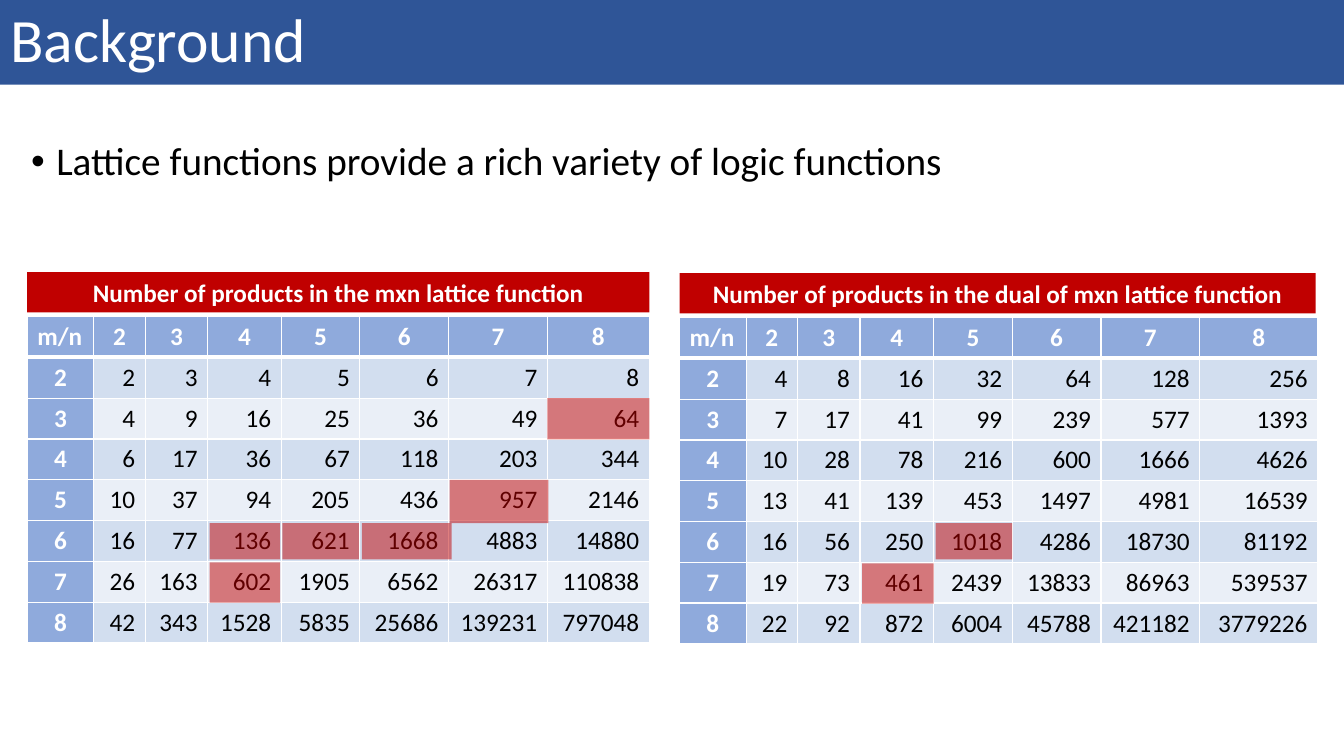
from dataclasses import dataclass

import pptx
import pptx.dml.color
import pptx.enum.shapes
import pptx.enum.text
import pptx.oxml
import pptx.oxml.ns
import pptx.util

Inches, Pt = pptx.util.Inches, pptx.util.Pt
RGB = pptx.dml.color.RGBColor.from_string
ALIGN = pptx.enum.text.PP_ALIGN
ANCHOR = pptx.enum.text.MSO_ANCHOR
AUTO = pptx.enum.text.MSO_AUTO_SIZE


@dataclass(frozen=True)
class Theme:
    font: str = "Calibri"
    banner: str = "2F5597"
    caption: str = "C00000"
    header: str = "8FAADC"
    bands: tuple[str, str] = ("D2DEEF", "EAEFF7")
    light: str = "FFFFFF"
    dark: str = "000000"
    title_size: int = 44
    bullet_size: int = 28
    table_size: int = 18


@dataclass(frozen=True)
class Box:
    left: float
    top: float
    width: float
    height: float

    def lengths(self) -> list[int]:
        return [Inches(v) for v in (self.left, self.top, self.width, self.height)]


@dataclass(frozen=True)
class ProductTable:
    caption: str
    caption_box: Box
    left: float
    top: float
    last_column: float
    counts: list[list[int]]
    highlights: list[Box]


THEME = Theme()
SIZES = range(2, 9)  # values of m and n
COLUMNS = [0.66, 0.51, 0.62, 0.73, 0.78, 0.88, 0.98]
TABLE_HEIGHT = 3.24

TABLES = [
    ProductTable(
        "Number of products in the mxn lattice function",
        Box(0.27, 2.7, 6.17, 0.4), 0.27, 3.14, 1.01,
        [[2, 3, 4, 5, 6, 7, 8],
         [4, 9, 16, 25, 36, 49, 64],
         [6, 17, 36, 67, 118, 203, 344],
         [10, 37, 94, 205, 436, 957, 2146],
         [16, 77, 136, 621, 1668, 4883, 14880],
         [26, 163, 602, 1905, 6562, 26317, 110838],
         [42, 343, 1528, 5835, 25686, 139231, 797048]],
        [Box(5.43, 3.95, 1.01, 0.41), Box(4.46, 4.76, 0.98, 0.43),
         Box(2.08, 5.19, 0.7, 0.36), Box(2.8, 5.19, 0.76, 0.36),
         Box(3.59, 5.19, 0.89, 0.36), Box(2.08, 5.58, 0.7, 0.4)]),
    ProductTable(
        "Number of products in the dual of mxn lattice function",
        Box(6.74, 2.71, 6.31, 0.4), 6.74, 3.15, 1.17,
        [[4, 8, 16, 32, 64, 128, 256],
         [7, 17, 41, 99, 239, 577, 1393],
         [10, 28, 78, 216, 600, 1666, 4626],
         [13, 41, 139, 453, 1497, 4981, 16539],
         [16, 56, 250, 1018, 4286, 18730, 81192],
         [19, 73, 461, 2439, 13833, 86963, 539537],
         [22, 92, 872, 6004, 45788, 421182, 3779226]],
        [Box(9.28, 5.19, 0.76, 0.36), Box(8.55, 5.59, 0.71, 0.4)]),
]


def write(tf, text: str, size: int, color: str, align=ALIGN.LEFT, bold: bool = False):
    p = tf.paragraphs[0]
    p.text, p.alignment = text, align
    p.font.name, p.font.size, p.font.bold = THEME.font, Pt(size), bold
    p.font.color.rgb = RGB(color)
    return p


def add_rect(s, box: Box, color: str):
    sp = s.shapes.add_shape(pptx.enum.shapes.MSO_SHAPE.RECTANGLE, *box.lengths())
    sp.shadow.inherit = False
    sp.fill.solid()
    sp.fill.fore_color.rgb = RGB(color)
    sp.line.fill.background()
    return sp


def add_highlight(s, box: Box) -> None:
    sp = add_rect(s, box, THEME.caption)
    color = sp.fill._xPr.find(".//" + pptx.oxml.ns.qn("a:srgbClr"))
    color.append(pptx.oxml.parse_xml(
        f'<a:alpha {pptx.oxml.ns.nsdecls("a")} val="50000"/>'))


def set_borders(cell, row: int) -> None:
    """White rules, thicker below the header row."""
    widths = {"L": 1, "R": 1, "T": 3 if row == 1 else 1, "B": 3 if row == 0 else 1}
    tc_pr = cell._tc.get_or_add_tcPr()
    for i, (side, width) in enumerate(widths.items()):
        tc_pr.insert(i, pptx.oxml.parse_xml(
            f'<a:ln{side} {pptx.oxml.ns.nsdecls("a")} w="{Pt(width)}"><a:solidFill>'
            f'<a:srgbClr val="{THEME.light}"/></a:solidFill></a:ln{side}>'))


def add_product_table(s, spec: ProductTable) -> None:
    widths = COLUMNS + [spec.last_column]
    rows = [["m/n", *SIZES]] + [[m, *line] for m, line in zip(SIZES, spec.counts)]
    box = Box(spec.left, spec.top, sum(widths), TABLE_HEIGHT)
    table = s.shapes.add_table(len(rows), len(widths), *box.lengths()).table
    for column, width in zip(table.columns, widths):
        column.width = Inches(width)
    for r, values in enumerate(rows):
        for c, value in enumerate(values):
            cell = table.cell(r, c)
            is_header = r == 0 or c == 0
            align = ALIGN.CENTER if is_header else ALIGN.RIGHT
            if r == c == 0:
                align = ALIGN.LEFT
            write(cell.text_frame, str(value), THEME.table_size,
                  THEME.light if is_header else THEME.dark, align, is_header)
            cell.fill.solid()
            cell.fill.fore_color.rgb = RGB(
                THEME.header if is_header else THEME.bands[(r - 1) % 2])
            set_borders(cell, r)

    # Caption and highlighted cells
    caption = add_rect(s, spec.caption_box, THEME.caption)
    caption.text_frame.word_wrap = True
    write(caption.text_frame, spec.caption, THEME.table_size, THEME.light,
          ALIGN.CENTER, True)
    for highlight in spec.highlights:
        add_highlight(s, highlight)


def add_title(s, text: str) -> None:
    sp = s.shapes.title
    sp.left, sp.top, sp.width, sp.height = Box(0, 0, 13.33, 0.84).lengths()
    sp.fill.solid()
    sp.fill.fore_color.rgb = RGB(THEME.banner)
    tf = sp.text_frame
    tf.auto_size, tf.vertical_anchor = AUTO.NONE, ANCHOR.MIDDLE
    write(tf, text, THEME.title_size, THEME.light).line_spacing = 0.9


def add_bullet(s, text: str) -> None:
    tf = s.shapes.add_textbox(*Box(0.21, 1.36, 12.92, 0.65).lengths()).text_frame
    tf.word_wrap = True
    p = write(tf, text, THEME.bullet_size, THEME.dark)
    p.line_spacing, p.space_before = 0.9, Pt(10)
    p_pr = p._p.get_or_add_pPr()
    p_pr.set("marL", str(Inches(0.25)))
    p_pr.set("indent", str(Inches(-0.25)))
    ns = pptx.oxml.ns.nsdecls("a")
    marks = (f'<a:buFont {ns} typeface="Arial"/>', f'<a:buChar {ns} char="•"/>')
    at = p_pr.index(p_pr.find(pptx.oxml.ns.qn("a:defRPr")))
    for i, mark in enumerate(marks):
        p_pr.insert(at + i, pptx.oxml.parse_xml(mark))


def main() -> None:
    prs = pptx.Presentation()
    prs.slide_width, prs.slide_height = Inches(13.33), Inches(7.5)
    s = prs.slides.add_slide(prs.slide_layouts[5])
    add_title(s, "Background")
    add_bullet(s, "Lattice functions provide a rich variety of logic functions")
    for spec in TABLES:
        add_product_table(s, spec)
    prs.save("out.pptx")


if __name__ == "__main__":
    main()
